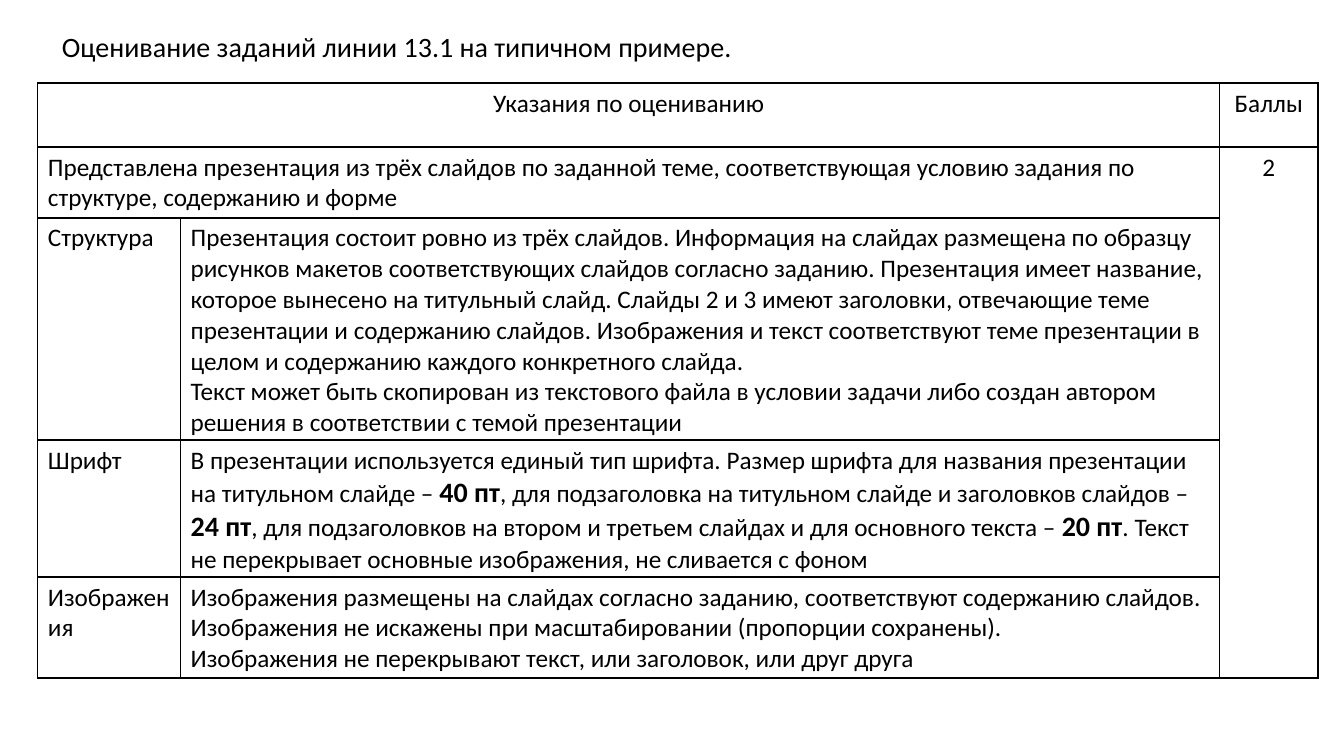
from lxml.etree import SubElement
from pptx import Presentation
from pptx.dml.color import RGBColor
from pptx.enum.text import MSO_ANCHOR, MSO_AUTO_SIZE, PP_ALIGN
from pptx.oxml.ns import qn
from pptx.util import Pt

BLACK = RGBColor(0, 0, 0)
FACE = "Calibri"
COLS = [102, 742, 70.5]
ROWS = [45.7, 50.7, 158.6, 97.9, 72.1]
CELLS = [
    (0, 0, ["Указания по оцениванию"]),
    (0, 2, ["Баллы"]),
    (1, 0, ["Представлена презентация из трёх слайдов по заданной теме, "
            "соответствующая условию задания по структуре, содержанию и форме"]),
    (1, 2, ["2"]),
    (2, 0, ["Структура"]),
    (2, 1, ["Презентация состоит ровно из трёх слайдов. Информация на слайдах "
            "размещена по образцу рисунков макетов соответствующих слайдов согласно "
            "заданию. Презентация имеет название, которое вынесено на титульный слайд. "
            "Слайды 2 и 3 имеют заголовки, отвечающие теме презентации и содержанию "
            "слайдов. Изображения и текст соответствуют теме презентации в целом и "
            "содержанию каждого конкретного слайда.",
            "Текст может быть скопирован из текстового файла в условии задачи либо "
            "создан автором",
            "решения в соответствии с темой презентации"]),
    (3, 0, ["Шрифт"]),
    (3, 1, ["В презентации используется единый тип шрифта. Размер шрифта для названия "
            "презентации на титульном слайде – *40 пт*, для подзаголовка на титульном "
            "слайде и заголовков слайдов – *24 пт*, для подзаголовков на втором и третьем "
            "слайдах и для основного текста – *20 пт*. Текст не перекрывает основные "
            "изображения, не сливается с фоном"]),
    (4, 0, ["Изображения"]),
    (4, 1, ["Изображения размещены на слайдах согласно заданию, соответствуют содержанию "
            "слайдов. Изображения не искажены при масштабировании (пропорции сохранены).",
            "Изображения не перекрывают текст, или заголовок, или друг друга"]),
]


def add_run(para, text, size, bold=False):
    run = para.add_run()
    run.text = text
    font = run.font
    font.name, font.size, font.bold = FACE, Pt(size), bold
    font.color.rgb = BLACK


def write(frame, paras, align):
    for i, text in enumerate(paras):
        para = frame.add_paragraph() if i else frame.paragraphs[0]
        para.alignment = align
        for j, part in enumerate(text.split("*")):
            bold = j % 2 == 1
            add_run(para, part, 20 if bold else 18, bold)


def style(cell):
    props = cell._tc.get_or_add_tcPr()
    for side in ("lnL", "lnR", "lnT", "lnB"):
        line = SubElement(props, qn("a:" + side), w=str(Pt(1)))
        fill = SubElement(line, qn("a:solidFill"))
        SubElement(fill, qn("a:srgbClr"), val=str(BLACK))
    cell.fill.background()
    cell.margin_bottom = 0


def add_title(slide, left, top, width, height):
    title = slide.shapes.title
    title.left, title.top = Pt(left), Pt(top)
    title.width, title.height = Pt(width), Pt(height)
    frame = title.text_frame
    frame.word_wrap = False
    frame.auto_size = MSO_AUTO_SIZE.NONE
    frame.vertical_anchor = MSO_ANCHOR.MIDDLE
    para = frame.paragraphs[0]
    para.alignment = PP_ALIGN.LEFT
    add_run(para, "Оценивание заданий линии 13.1 на типичном примере.", 20)


def add_grid(slide, left, top):
    shape = slide.shapes.add_table(
        len(ROWS), len(COLS), Pt(left), Pt(top), Pt(sum(COLS)), Pt(sum(ROWS)))
    table = shape.table
    table.first_row = table.horz_banding = False
    for col, width in zip(table.columns, COLS):
        col.width = Pt(width)
    for row, height in zip(table.rows, ROWS):
        row.height = Pt(height)
    for cell in table.iter_cells():
        style(cell)
    for row in (0, 1):
        table.cell(row, 0).merge(table.cell(row, 1))
    table.cell(1, 2).merge(table.cell(4, 2))
    for row, col, paras in CELLS:
        mid = row == 0 or col == 2
        align = PP_ALIGN.CENTER if mid else PP_ALIGN.LEFT
        write(table.cell(row, col).text_frame, paras, align)


def main():
    deck = Presentation()
    deck.slide_width, deck.slide_height = Pt(960), Pt(540)
    slide = deck.slides.add_slide(deck.slide_layouts[5])
    add_title(slide, 37, 17, 496, 32)
    add_grid(slide, 27, 59.3)
    deck.save("out.pptx")


if __name__ == "__main__":
    main()
